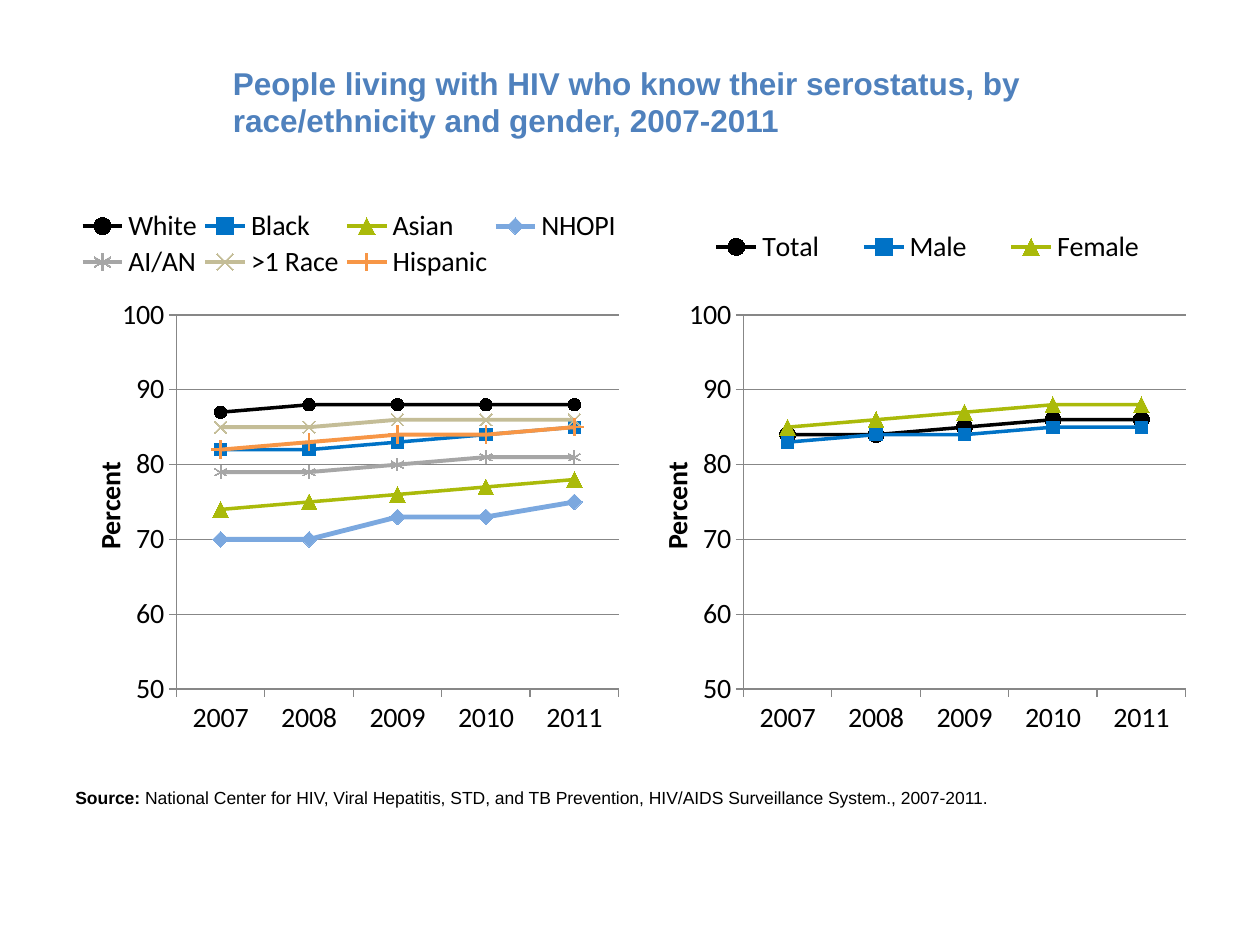
from lxml import etree
from pptx import Presentation
from pptx import util as u
from pptx.chart.data import CategoryChartData
from pptx.dml.color import RGBColor
from pptx.enum import chart as ch, text
from pptx.oxml.ns import qn

# Content
COLORS = {"title": "4F81BD", "text": "000000", "axis": "878787",
          "black": "000000", "blue": "0072C6", "green": "AABA0A",
          "sky": "7BA8DF", "gray": "A6A6A6", "tan": "C4BD97", "orange": "F79646"}
TITLE = ("People living with HIV who know their serostatus, by "
         "race/ethnicity and gender, 2007-2011")
SOURCE = [("Source: ", True),
          ("National Center for HIV, Viral Hepatitis, STD, and TB Prevention, "
           "HIV/AIDS Surveillance System., 2007-2011.", False)]
YEARS = ["2007", "2008", "2009", "2010", "2011"]
# Series: name, values, color, line width, marker style, marker size
RACE = [
    ("White", (87, 88, 88, 88, 88), "black", 2, "CIRCLE", 7),
    ("Black", (82, 82, 83, 84, 85), "blue", 2, "SQUARE", 7),
    ("Asian", (74, 75, 76, 77, 78), "green", 2, "TRIANGLE", 9),
    ("NHOPI", (70, 70, 73, 73, 75), "sky", 2.75, "DIAMOND", 9),
    ("AI/AN", (79, 79, 80, 81, 81), "gray", 2.25, "STAR", 7),
    (">1 Race", (85, 85, 86, 86, 86), "tan", 2.25, "X", 7),
    ("Hispanic", (82, 83, 84, 84, 85), "orange", 2.25, "PLUS", 10),
]
GENDER = [
    ("Total", (84, 84, 85, 86, 86), "black", 2, "CIRCLE", 9),
    ("Male", (83, 84, 84, 85, 85), "blue", 2, "SQUARE", 7),
    ("Female", (85, 86, 87, 88, 88), "green", 2, "TRIANGLE", 9),
]
# Charts: series, legend box as fractions of the chart
CHARTS = [(RACE, (0.02, 0.01, 0.97, 0.13)), (GENDER, (0.09, 0.04, 0.87, 0.08))]
CHART_LEFT, CHART_TOP, CHART_SIZE = 0.5, 1.6, 4.5
PLOT_BOX = (0.2, 0.2, 0.78, 0.66)
AXIS_TITLE_AT = (0.04, 0.45)
OPEN_MARKERS = ("STAR", "X")


def rgb(name):
    return RGBColor.from_string(COLORS[name])


def style(font, size, name, color="text", bold=False):
    values = {"size": u.Pt(size), "name": name, "bold": bold}
    for key, value in values.items():
        setattr(font, key, value)
    font.color.rgb = rgb(color)


def place(parent, index, box, inner=False):
    """Give a chart part a manual layout, in fractions of the chart."""
    for old in parent.findall(qn("c:layout")):
        parent.remove(old)
    layout = etree.Element(qn("c:layout"))
    manual = etree.SubElement(layout, qn("c:manualLayout"))
    settings = [("layoutTarget", "inner")] if inner else []
    settings += [("xMode", "edge"), ("yMode", "edge")]
    settings += zip("xywh", box)
    for tag, value in settings:
        etree.SubElement(manual, qn(f"c:{tag}")).set("val", str(value))
    parent.insert(index, layout)


def add_text(slide, box, runs, size, color, anchor):
    frame = slide.shapes.add_textbox(*map(u.Inches, box)).text_frame
    frame.word_wrap = True
    frame.vertical_anchor = anchor
    for words, bold in runs:
        run = frame.paragraphs[0].add_run()
        run.text = words
        style(run.font, size, "Arial", color, bold)


def add_line_chart(slide, left, series_rows, legend_box):
    data = CategoryChartData(number_format="0")
    data.categories = YEARS
    for name, values, *_ in series_rows:
        data.add_series(name, values)
    chart = slide.shapes.add_chart(
        ch.XL_CHART_TYPE.LINE_MARKERS,
        *map(u.Inches, (left, CHART_TOP, CHART_SIZE, CHART_SIZE)), data).chart
    chart.has_title = False
    style(chart.font, 10, "Arial")
    chart.plots[0].vary_by_categories = False
    place(chart.plots[0]._element.getparent(), 0, PLOT_BOX, inner=True)

    # Lines and markers
    for series, (_, _, color, width, marker, size) in zip(chart.plots[0].series, series_rows):
        series.smooth = False
        series.format.line.color.rgb = rgb(color)
        series.format.line.width = u.Pt(width)
        series.marker.style = ch.XL_MARKER_STYLE[marker]
        series.marker.size = size
        series.marker.format.line.color.rgb = rgb(color)
        if marker in OPEN_MARKERS:
            series.marker.format.fill.background()
        else:
            series.marker.format.fill.solid()
            series.marker.format.fill.fore_color.rgb = rgb(color)

    # Axes
    percent = chart.value_axis
    scale = {"minimum_scale": 50, "maximum_scale": 100, "major_unit": 10,
             "has_major_gridlines": True}
    for key, value in scale.items():
        setattr(percent, key, value)
    percent.tick_labels.number_format = "0"
    percent.tick_labels.number_format_is_linked = False
    percent.major_gridlines.format.line.color.rgb = rgb("axis")
    for axis in (chart.category_axis, percent):
        axis.major_tick_mark = ch.XL_TICK_MARK.OUTSIDE
        axis.format.line.color.rgb = rgb("axis")
        style(axis.tick_labels.font, 16, "Calibri")
    label = percent.axis_title.text_frame.paragraphs[0].add_run()
    label.text = "Percent"
    style(label.font, 16, "Calibri", bold=True)
    place(percent.axis_title._element, 1, AXIS_TITLE_AT)

    # Legend
    chart.has_legend = True
    chart.legend.position = ch.XL_LEGEND_POSITION.TOP
    chart.legend.include_in_layout = False
    style(chart.legend.font, 16, "Calibri")
    place(chart.legend._element, 1, legend_box)


def main():
    deck = Presentation()
    deck.slide_width, deck.slide_height = u.Inches(10), u.Inches(7.5)
    slide = deck.slides.add_slide(deck.slide_layouts[6])
    add_text(slide, (1.75, 0.33, 7.75, 0.95), [(TITLE, True)], 18, "title",
             text.MSO_ANCHOR.MIDDLE)
    for column, (series_rows, legend_box) in enumerate(CHARTS):
        add_line_chart(slide, CHART_LEFT + column * CHART_SIZE, series_rows, legend_box)
    add_text(slide, (0.5, 6.2, 9, 0.27), SOURCE, 10, "text", text.MSO_ANCHOR.TOP)
    deck.save("out.pptx")


if __name__ == "__main__":
    main()
